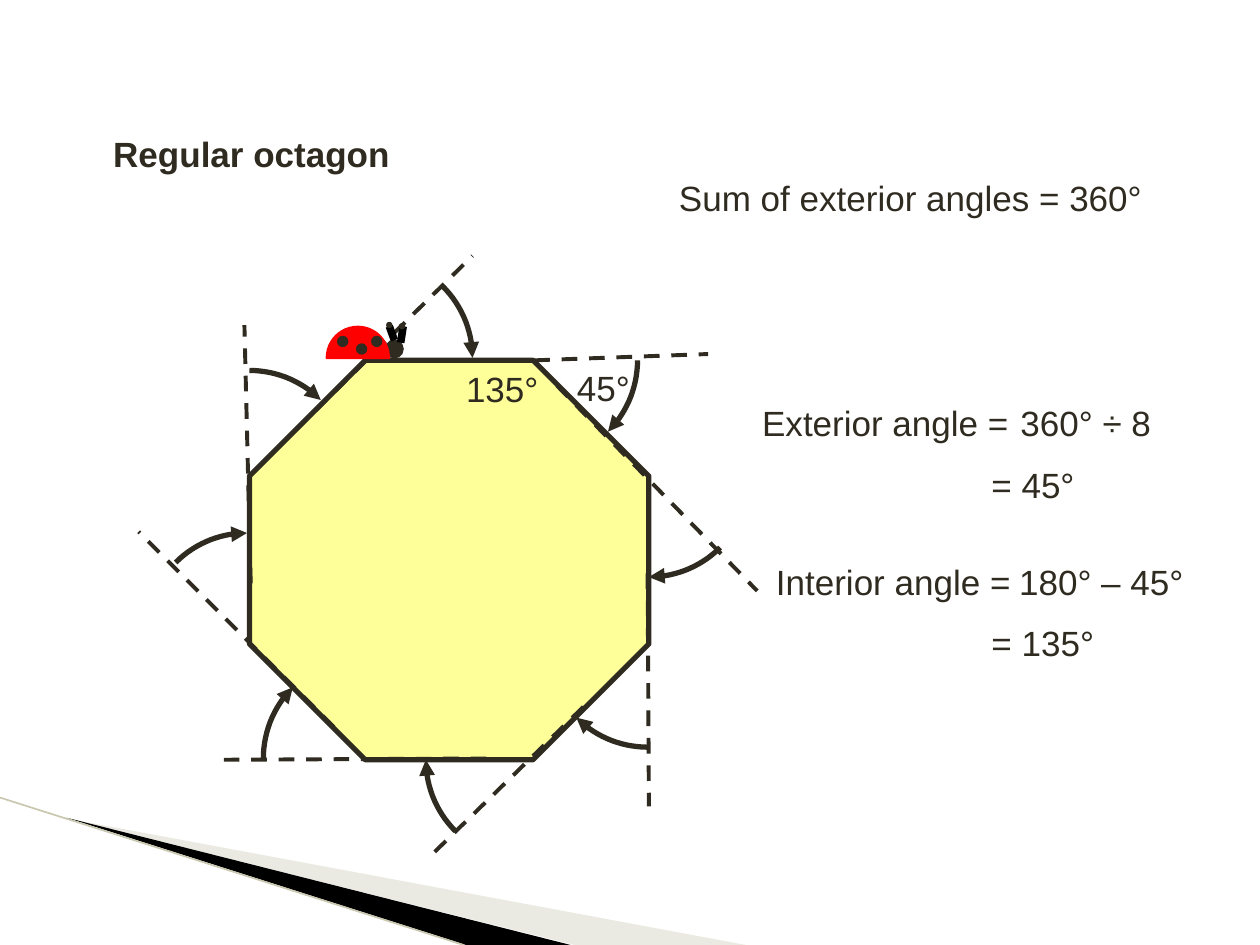
"""Build a slide on the exterior and interior angles of a regular octagon."""
import math

from lxml import etree
from pptx import Presentation, util as u
from pptx.dml.color import RGBColor
from pptx.enum import dml, shapes, text
from pptx.oxml.ns import qn

INK = RGBColor(0x2F, 0x2B, 0x20)
YELLOW = RGBColor(0xFF, 0xFF, 0x99)
RED = RGBColor(0xFF, 0, 0)
BLACK = RGBColor(0, 0, 0)
STONE = RGBColor(0xCE, 0xCC, 0xB7)
EDGE = RGBColor(0xC9, 0xC7, 0xB0)

LABELS = [
    ("45°", 4.48, 2.86, 0.63, False),
    ("135°", 3.6, 2.87, 0.78, False),
    ("Sum of exterior angles = 360°", 5.29, 1.35, 3.95, False),
    ("Exterior angle =", 5.95, 3.14, 2.19, False),
    ("360° ÷ 8", 8, 3.14, 1.32, False),
    ("= 45°", 7.77, 3.63, 0.87, False),
    ("Interior angle =", 6.06, 4.4, 2.08, False),
    ("180° – 45°", 7.99, 4.4, 1.57, False),
    ("= 135°", 7.77, 4.88, 1.02, False),
    ("Regular octagon", 0.8, 1, 2.51, True),
]
EXTENSIONS = [
    (4.24, 2.86, 5.62, 2.81), (4.42, 3.06, 6.01, 4.69),
    (5.14, 4.55, 5.15, 6.4), (4.63, 5.61, 3.39, 6.82),
    (3.86, 6.02, 1.74, 6.03), (2.65, 5.77, 1.1, 4.22),
    (1.99, 4.63, 1.94, 2.58), (2.35, 3.41, 3.75, 2.03),
]
ARC_CENTRES = [
    (4.26, 2.86), (5.15, 3.78), (5.14, 5.13), (4.18, 6.03),
    (2.89, 6.02), (1.96, 5.03), (1.98, 3.74), (2.95, 2.84),
]
RADIUS, TURN, STEPS = 0.8, 45, 15
WEDGES = [
    ([(0.55, 6.5), (5.92, 7.5), (4.56, 7.5)], STONE, 40),
    ([(0.53, 6.49), (4.53, 7.5), (3.7, 7.5)], BLACK, 100),
]
SPOTS = [(2.68, 2.67), (2.83, 2.73), (2.95, 2.67)]
FEELERS = [(3.13, 2.7, 3.09, 2.59), (3.18, 2.72, 3.2, 2.59)]
FEELER_TIPS = [(3.07, 2.56), (3.17, 2.57)]


def inches(values):
    return [u.Inches(v) for v in values]


def add_line(parent, ends, color, width, dash=None):
    c = parent.add_connector(shapes.MSO_CONNECTOR.STRAIGHT, *inches(ends))
    c.line.color.rgb, c.line.width = color, u.Pt(width)
    if dash:
        c.line.dash_style = dash
    etree.SubElement(c._element.spPr, qn("a:effectLst"))


def add_solid(parent, kind, box, fill, line, width=0.75):
    sp = parent.add_shape(kind, *inches(box))
    sp.shadow.inherit = False
    sp.fill.solid()
    sp.fill.fore_color.rgb = fill
    sp.line.color.rgb, sp.line.width = line, u.Pt(width)
    return sp


def add_outline(parent, points, close):
    start, *rest = [inches(p) for p in points]
    builder = parent.build_freeform(*start)
    builder.add_line_segments(rest, close=close)
    sp = builder.convert_to_shape()
    sp.shadow.inherit = False
    return sp


def add_wedge(parent, points, color, opacity):
    sp = add_outline(parent, points, True)
    sp.fill.solid()
    sp.fill.fore_color.rgb = color
    sp.line.fill.background()
    if opacity < 100:
        clr = sp._element.spPr.find(qn("a:solidFill"))[0]
        etree.SubElement(clr, qn("a:alpha"), val=str(opacity * 1000))


def add_arc_arrow(parent, centre, start):
    angles = [math.radians(start + TURN * i / STEPS) for i in range(STEPS + 1)]
    points = [(centre[0] + RADIUS * math.cos(a), centre[1] + RADIUS * math.sin(a))
              for a in angles]
    sp = add_outline(parent, points, False)
    sp.fill.background()
    sp.line.color.rgb, sp.line.width = INK, u.Pt(3)
    etree.SubElement(sp._element.spPr.find(qn("a:ln")), qn("a:tailEnd"), type="triangle")


def add_label(parent, words, left, top, width, bold):
    tf = parent.add_textbox(*inches((left, top, width, 0.44))).text_frame
    tf.word_wrap = False
    tf.auto_size = text.MSO_AUTO_SIZE.SHAPE_TO_FIT_TEXT
    r = tf.paragraphs[0].add_run()
    r.text = words
    r.font.name, r.font.size, r.font.bold = "Arial", u.Pt(20), bold
    r.font.color.rgb = INK


def add_ladybird(parent):
    oval = shapes.MSO_SHAPE.OVAL
    group = parent.add_group_shape().shapes
    add_solid(group, oval, (3.06, 2.7, 0.14, 0.14), INK, INK)
    body = add_solid(group, shapes.MSO_SHAPE.CHORD, (2.59, 2.59, 0.5, 0.5), RED, RED)
    body.adjustments[0], body.adjustments[1] = 107.33, 0.82
    for spot in SPOTS:
        add_solid(group, oval, (*spot, 0.08, 0.08), INK, INK)
    for feeler in FEELERS:
        add_line(group, feeler, BLACK, 4.33)
    for tip in FEELER_TIPS:
        add_solid(group, oval, (*tip, 0.04, 0.04), INK, INK)


def main():
    prs = Presentation()
    prs.slide_width, prs.slide_height = inches((10, 7.5))
    s = prs.slides.add_slide(prs.slide_layouts[6]).shapes
    for wedge in WEDGES:
        add_wedge(s, *wedge)
    add_line(s, (0, 6.33, 3.68, 7.5), EDGE, 0.95)
    octagon = add_solid(s, shapes.MSO_SHAPE.OCTAGON, (1.98, 2.86, 3.17, 3.17), YELLOW, INK, 3)
    octagon.adjustments[0] = 0.29
    for ends in EXTENSIONS:
        add_line(s, ends, INK, 2.25, dml.MSO_LINE.DASH)
    for i, centre in enumerate(ARC_CENTRES):
        add_arc_arrow(s, centre, i * TURN)
    for label in LABELS:
        add_label(s, *label)
    add_ladybird(s)
    prs.save("out.pptx")


if __name__ == "__main__":
    main()
